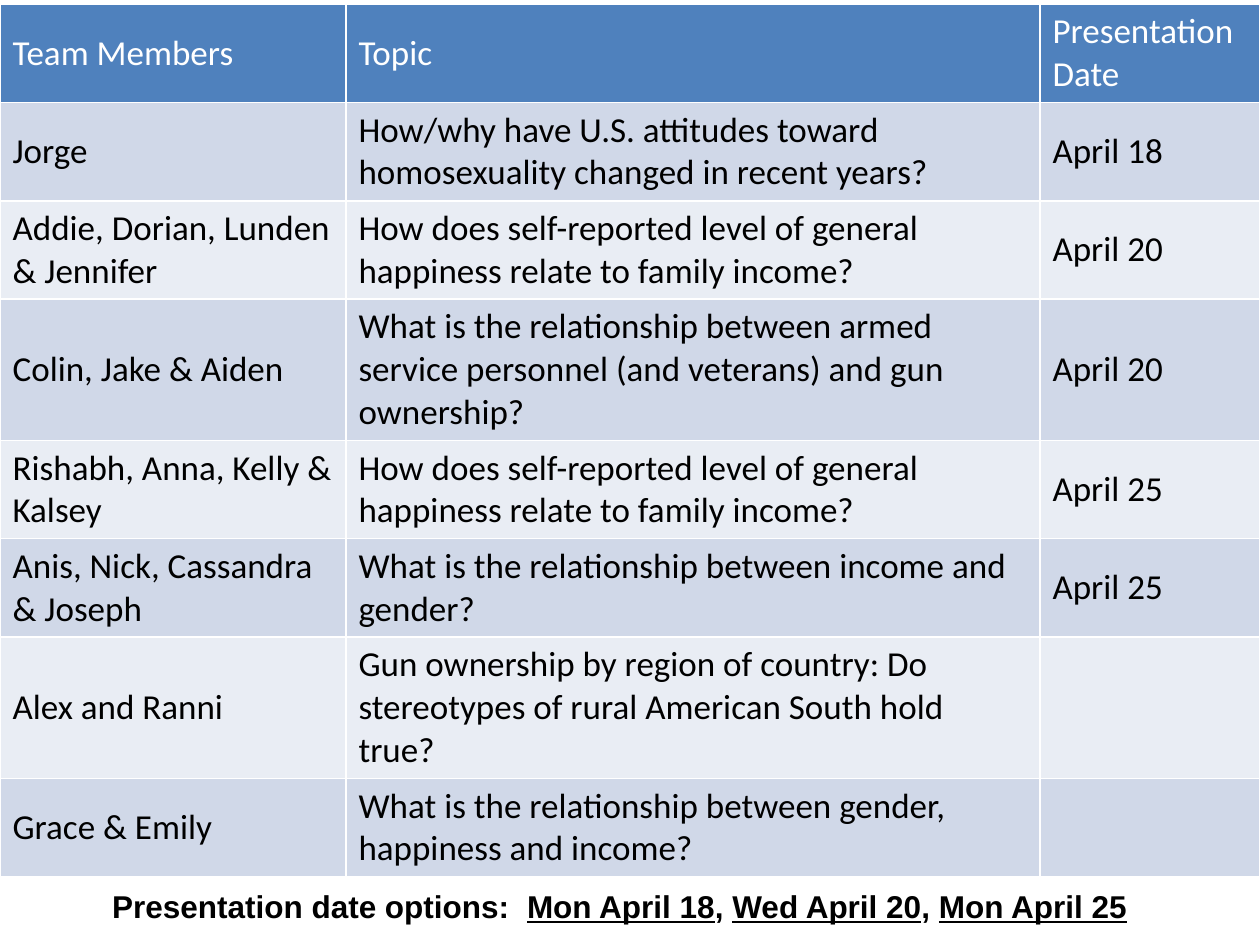
from typing import NamedTuple

from lxml.etree import SubElement
from pptx import Presentation
from pptx.dml.color import RGBColor
from pptx.enum.text import MSO_ANCHOR as Anchor, MSO_AUTO_SIZE as Fit, PP_ALIGN as Align
from pptx.oxml.ns import qn
from pptx.util import Emu, Pt

WHITE = RGBColor(0xFF, 0xFF, 0xFF)
BLACK = RGBColor(0x00, 0x00, 0x00)
BLUE = RGBColor(0x4F, 0x81, 0xBD)
BANDS = RGBColor(0xD0, 0xD8, 0xE8), RGBColor(0xE9, 0xED, 0xF4)
COLS = 346, 694, 220
LOW, TALL = 98, 141  # rows of two and three lines


class Talk(NamedTuple):
    team: str
    topic: str
    date: str
    high: int = LOW


class Part(NamedTuple):
    text: str
    line: bool = False


TALKS = [
    Talk("Team Members", "Topic", "Presentation Date"),
    Talk("Jorge", "How/why have U.S. attitudes toward homosexuality changed in recent years?",
         "April 18"),
    Talk("Addie, Dorian, Lunden & Jennifer",
         "How does self-reported level of general happiness relate to family income?",
         "April 20"),
    Talk("Colin, Jake & Aiden",
         "What is the relationship between armed service personnel (and veterans) "
         "and gun ownership?", "April 20", TALL),
    Talk("Rishabh, Anna, Kelly & Kalsey",
         "How does self-reported level of general happiness relate to family income?",
         "April 25"),
    Talk("Anis, Nick, Cassandra & Joseph",
         "What is the relationship between income and gender?", "April 25"),
    Talk("Alex and Ranni",
         "Gun ownership by region of country: Do stereotypes of rural American South "
         "hold true?", "", TALL),
    Talk("Grace & Emily",
         "What is the relationship between gender, happiness and income?", ""),
]

DATES = [
    Part("Presentation date options:  "),
    Part("Mon April 18", True),
    Part(", "),
    Part("Wed April 20", True),
    Part(", "),
    Part("Mon April 25", True),
]


def px(size: int) -> Emu:
    return Emu(round(size * 914400 / 126))


def add_edges(cell) -> None:
    """Give all four sides of the cell a thin white line."""
    props = cell._tc.get_or_add_tcPr()
    for side in ("a:lnL", "a:lnR", "a:lnT", "a:lnB"):
        edge = SubElement(props, qn(side), w=str(Pt(1)))
        fill = SubElement(edge, qn("a:solidFill"))
        SubElement(fill, qn("a:srgbClr"), val=str(WHITE))


def fill_cell(cell, text: str, back: RGBColor, ink: RGBColor) -> None:
    add_edges(cell)
    cell.fill.solid()
    cell.fill.fore_color.rgb = back
    cell.vertical_anchor = Anchor.MIDDLE
    cell.text = text
    font = cell.text_frame.paragraphs[0].font
    font.name, font.size, font.bold = "Calibri", Pt(20), False
    font.color.rgb = ink


def add_talks(slide, talks: list[Talk]) -> None:
    high = sum(talk.high for talk in talks)
    table = slide.shapes.add_table(
        len(talks), len(COLS), px(0), px(4), px(sum(COLS)), px(high)).table
    table.horz_banding = False
    for col, wide in zip(table.columns, COLS):
        col.width = px(wide)
    for i, (row, talk) in enumerate(zip(table.rows, talks)):
        row.height = px(talk.high)
        back, ink = (BANDS[(i - 1) % 2], BLACK) if i else (BLUE, WHITE)
        for cell, text in zip(row.cells, (talk.team, talk.topic, talk.date)):
            fill_cell(cell, text, back, ink)


def add_dates(slide, parts: list[Part]) -> None:
    frame = slide.shapes.add_textbox(px(42), px(881), px(1155), px(50)).text_frame
    frame.word_wrap = True
    frame.auto_size = Fit.SHAPE_TO_FIT_TEXT
    para = frame.paragraphs[0]
    para.alignment = Align.CENTER
    para.font.name, para.font.size, para.font.bold = "Arial", Pt(18), True
    para.font.color.rgb = BLACK
    for part in parts:
        run = para.add_run()
        run.text = part.text
        run.font.underline = part.line


def main() -> None:
    deck = Presentation()
    deck.slide_width, deck.slide_height = px(1260), px(945)
    slide = deck.slides.add_slide(deck.slide_layouts[6])
    add_talks(slide, TALKS)
    add_dates(slide, DATES)
    deck.save("out.pptx")


if __name__ == "__main__":
    main()
